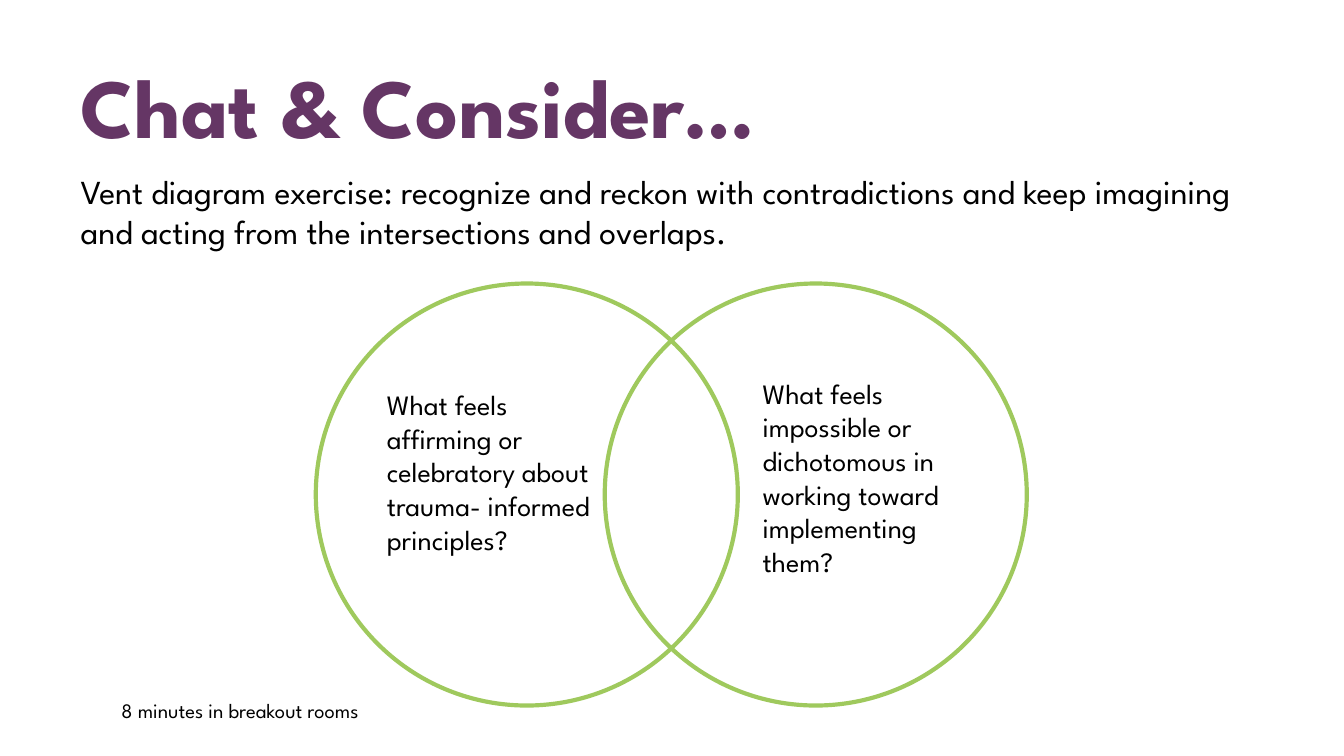
from dataclasses import dataclass

from pptx import Presentation
from pptx.dml.color import RGBColor as Color
from pptx.enum.shapes import MSO_SHAPE as Shape
from pptx.enum.text import MSO_ANCHOR as Anchor, MSO_AUTO_SIZE as Fit
from pptx.slide import Slide
from pptx.util import Emu, Pt

SCALE = 4572


@dataclass(frozen=True)
class Theme:
    font: str = "League Spartan"
    plum: str = "653665"
    ink: str = "000000"
    green: str = "9FC95D"
    title: int = 45
    lead: int = 18
    label: int = 15
    note: int = 11
    ring: float = 2.25


@dataclass(frozen=True)
class Box:
    left: int
    top: int
    width: int
    height: int


@dataclass(frozen=True)
class Label:
    text: str
    box: Box
    size: int
    color: str
    side: int = 20
    edge: int = 20
    bold: bool = False
    space: int = 0
    anchor: Anchor = Anchor.TOP
    fit: Fit = Fit.SHAPE_TO_FIT_TEXT


THEME = Theme()
RINGS = [Box(left, 422, 628, 628) for left in (470, 900)]
HEADS = [
    Label("Chat & Consider…", Box(120, -53, 1724, 294), THEME.title,
          THEME.plum, side=0, edge=10, bold=True, anchor=Anchor.BOTTOM,
          fit=Fit.NONE),
    Label("Vent diagram exercise: recognize and reckon with contradictions "
          "and keep imagining and acting from the intersections and overlaps.",
          Box(120, 244, 1724, 154), THEME.lead, THEME.ink,
          side=0, edge=10, space=4, fit=Fit.NONE),
]
NOTES = [
    Label("What feels affirming or celebratory about trauma- informed "
          "principles?", Box(556, 557, 344, 344), THEME.label, THEME.ink),
    Label("What feels impossible or dichotomous in working toward "
          "implementing them?", Box(1115, 540, 344, 394), THEME.label,
          THEME.ink),
    Label("8 minutes in breakout rooms", Box(161, 1020, 1258, 78),
          THEME.note, THEME.ink),
]


def px(size: int) -> Emu:
    return Emu(size * SCALE)


def place(box: Box) -> tuple[Emu, Emu, Emu, Emu]:
    return px(box.left), px(box.top), px(box.width), px(box.height)


def draw_ring(slide: Slide, box: Box) -> None:
    ring = slide.shapes.add_shape(Shape.OVAL, *place(box))
    ring.shadow.inherit = False
    ring.fill.background()
    ring.line.color.rgb = Color.from_string(THEME.green)
    ring.line.width = Pt(THEME.ring)


def draw_label(slide: Slide, label: Label) -> None:
    frame = slide.shapes.add_textbox(*place(label.box)).text_frame
    frame.word_wrap = True
    frame.auto_size = label.fit
    frame.vertical_anchor = label.anchor
    frame.margin_left = frame.margin_right = px(label.side)
    frame.margin_top = frame.margin_bottom = px(label.edge)
    para = frame.paragraphs[0]
    para.space_before = Pt(label.space)
    run = para.add_run()
    run.text = label.text
    run.font.name = THEME.font
    run.font.size = Pt(label.size)
    run.font.bold = label.bold
    run.font.color.rgb = Color.from_string(label.color)


def main() -> None:
    deck = Presentation()
    deck.slide_width, deck.slide_height = px(2000), px(1125)
    slide = deck.slides.add_slide(deck.slide_layouts[6])
    for label in HEADS:
        draw_label(slide, label)
    for box in RINGS:
        draw_ring(slide, box)
    for label in NOTES:
        draw_label(slide, label)
    deck.save("out.pptx")


if __name__ == "__main__":
    main()
